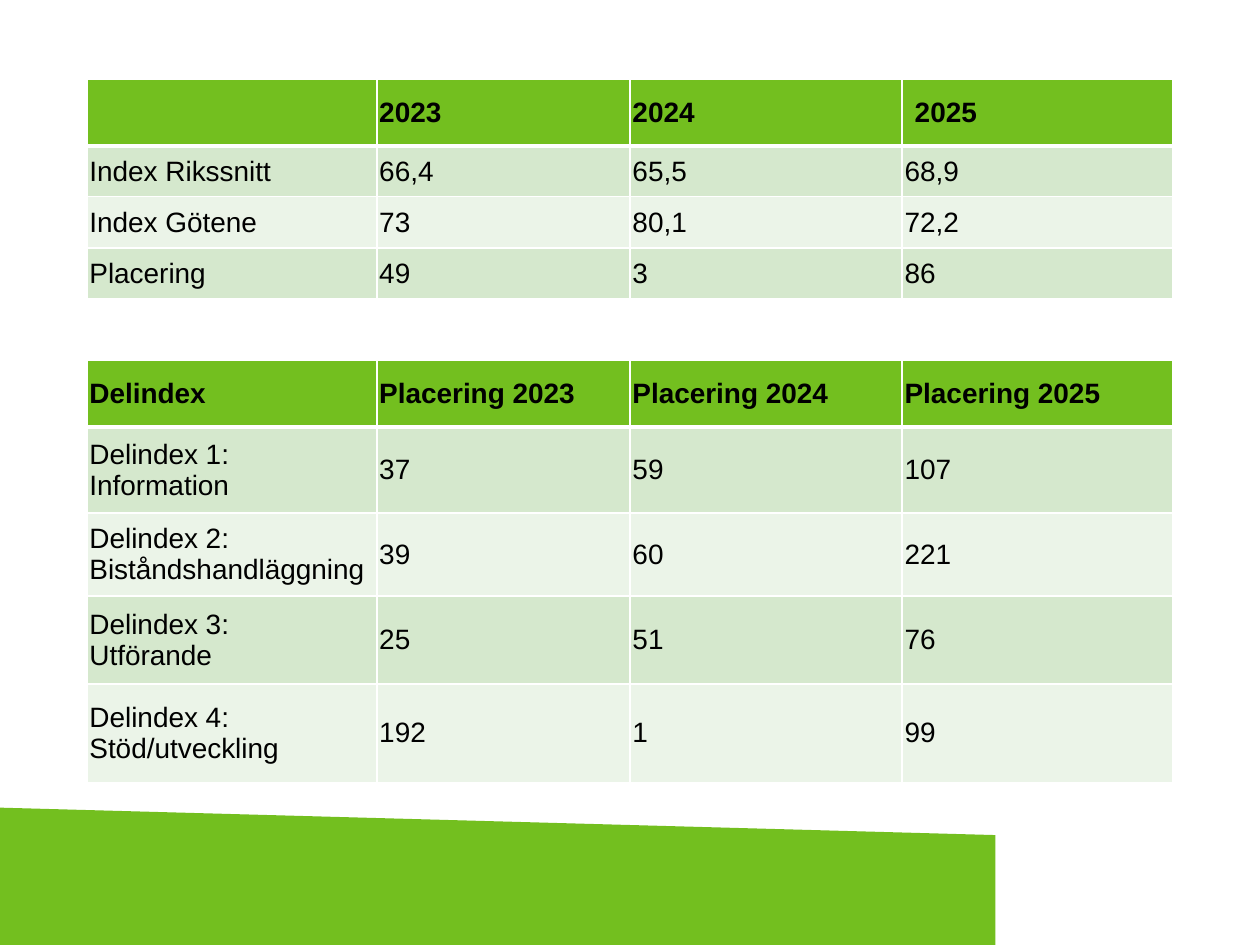
from dataclasses import dataclass

from lxml.etree import SubElement
from pptx import Presentation
from pptx.dml.color import RGBColor
from pptx.enum.shapes import MSO_SHAPE
from pptx.enum.text import MSO_ANCHOR
from pptx.oxml.ns import qn
from pptx.util import Inches, Pt


@dataclass(frozen=True)
class Theme:
    """Colours, type and line widths of the slide."""
    green: str = "73BF1F"
    bands: tuple = ("D5E8CD", "EBF4E8")
    text: str = "000000"
    border: str = "FFFFFF"
    font: str = "Arial"
    size: int = 16
    thin: int = 1
    thick: int = 3


THEME = Theme()
COLUMNS = (2.3, 2.01, 2.16, 2.15)
TIGHT = 0.02
INDEX_ROWS = (
    ("", "2023", "2024", "2025"),
    ("Index Rikssnitt", "66,4", "65,5", "68,9"),
    ("Index Götene", "73", "80,1", "72,2"),
    ("Placering", "49", "3", "86"),
)
RANKING_ROWS = (
    ("Delindex", "Placering 2023", "Placering 2024", "Placering 2025"),
    ("Delindex 1: Information", "37", "59", "107"),
    ("Delindex 2: Biståndshandläggning", "39", "60", "221"),
    ("Delindex 3: \vUtförande", "25", "51", "76"),
    ("Delindex 4: Stöd/utveckling", "192", "1", "99"),
)


def apply_format(target, values):
    """Set every attribute named in values on target."""
    for name, value in values.items():
        setattr(target, name, value)


def set_fill(target, colour):
    """Give target a solid fill."""
    target.fill.solid()
    target.fill.fore_color.rgb = RGBColor.from_string(colour)


def set_borders(cell, widths):
    """Draw the cell borders with a width in points for each side."""
    properties = cell._tc.get_or_add_tcPr()
    for side, width in widths.items():
        border = SubElement(properties, qn(f"a:ln{side}"), w=str(Pt(width)))
        solid = SubElement(border, qn("a:solidFill"))
        SubElement(solid, qn("a:srgbClr"), val=THEME.border)


def format_cell(cell, text, row):
    """Fill one cell with text in the style of its row."""
    header = row == 0
    cell.text = text
    apply_format(cell, {
        "vertical_anchor": MSO_ANCHOR.MIDDLE,
        "margin_left": Inches(TIGHT),
        "margin_right": Inches(TIGHT),
        "margin_top": Inches(TIGHT),
        "margin_bottom": Inches(TIGHT),
    })
    set_borders(cell, {
        "L": THEME.thin,
        "R": THEME.thin,
        "T": THEME.thick if row == 1 else THEME.thin,
        "B": THEME.thick if header else THEME.thin,
    })
    set_fill(cell, THEME.green if header else THEME.bands[(row - 1) % 2])
    for run in cell.text_frame.paragraphs[0].runs:
        apply_format(run.font, {
            "name": THEME.font, "size": Pt(THEME.size), "bold": header})
        run.font.color.rgb = RGBColor.from_string(THEME.text)


def add_results(slide, box, rows, heights):
    """Place a results table in the box and return it."""
    results = slide.shapes.add_table(
        len(rows), len(COLUMNS), *map(Inches, box)).table
    for column, width in zip(results.columns, COLUMNS):
        column.width = Inches(width)
    for index, (values, height) in enumerate(zip(rows, heights)):
        results.rows[index].height = Inches(height)
        for cell, value in zip(results.rows[index].cells, values):
            format_cell(cell, value, index)
    return results


def add_footer(slide, box):
    """Place the slanted green band in the box."""
    band = slide.shapes.add_shape(
        MSO_SHAPE.FLOWCHART_MANUAL_INPUT, *map(Inches, box))
    band.shadow.inherit = False
    set_fill(band, THEME.green)
    band.line.fill.background()
    band._element.spPr.find(qn("a:xfrm")).set("flipH", "1")


def main():
    """Build and save the slide."""
    deck = Presentation()
    apply_format(deck, {"slide_width": Inches(10), "slide_height": Inches(7.5)})
    slide = deck.slides.add_slide(deck.slide_layouts[6])
    width = sum(COLUMNS)

    add_footer(slide, (0, 6.41, 7.9, 1.09))
    index_heights = (0.53, 0.4, 0.41, 0.4)
    index = add_results(
        slide, (0.69, 0.63, width, sum(index_heights)), INDEX_ROWS, index_heights)
    apply_format(index.cell(0, 3), {
        "margin_left": Inches(0.1), "margin_right": Inches(0.1)})
    ranking_heights = (0.53, 0.68, 0.66, 0.7, 0.78)
    add_results(
        slide, (0.69, 2.86, width, sum(ranking_heights)),
        RANKING_ROWS, ranking_heights)

    deck.save("out.pptx")


if __name__ == "__main__":
    main()
